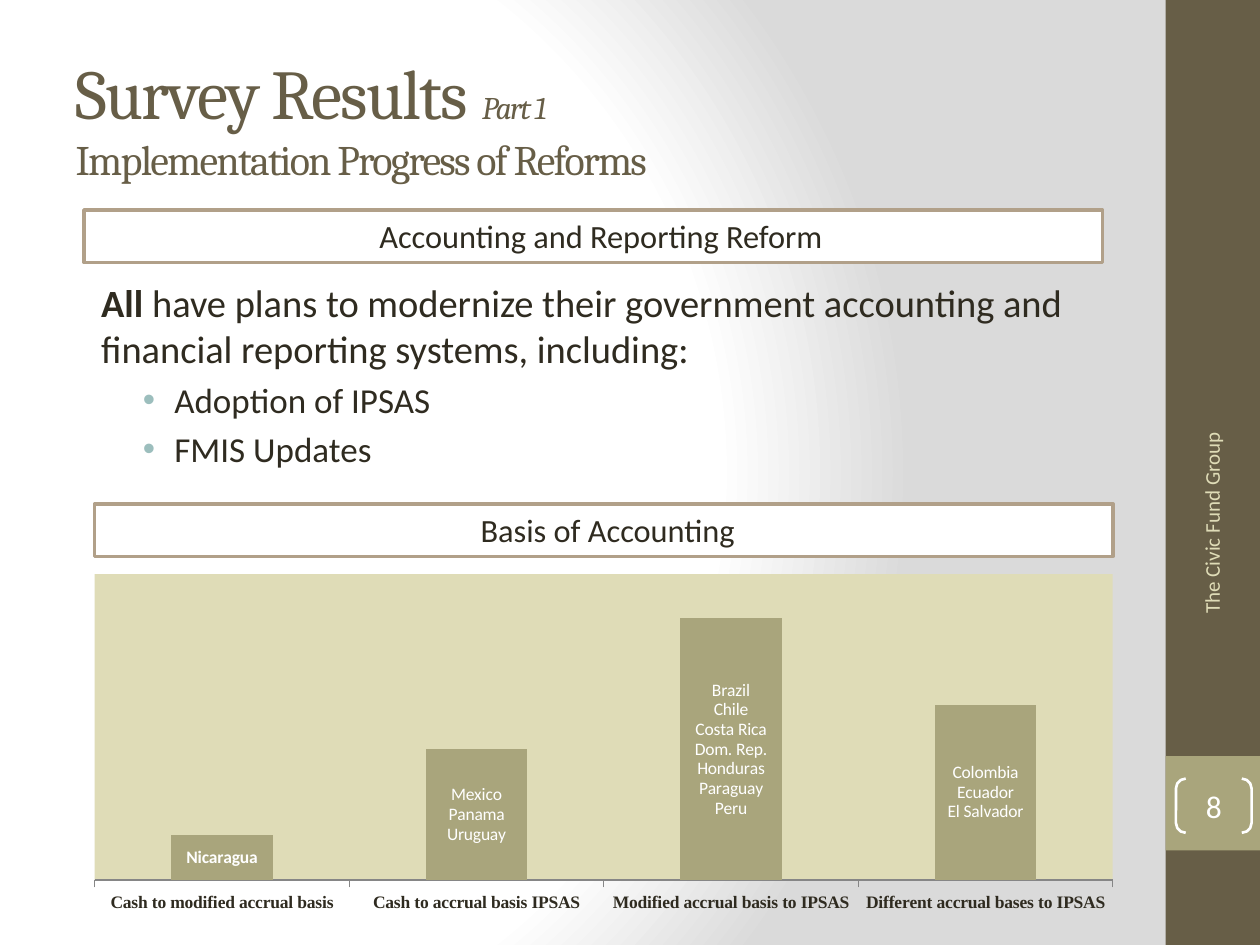
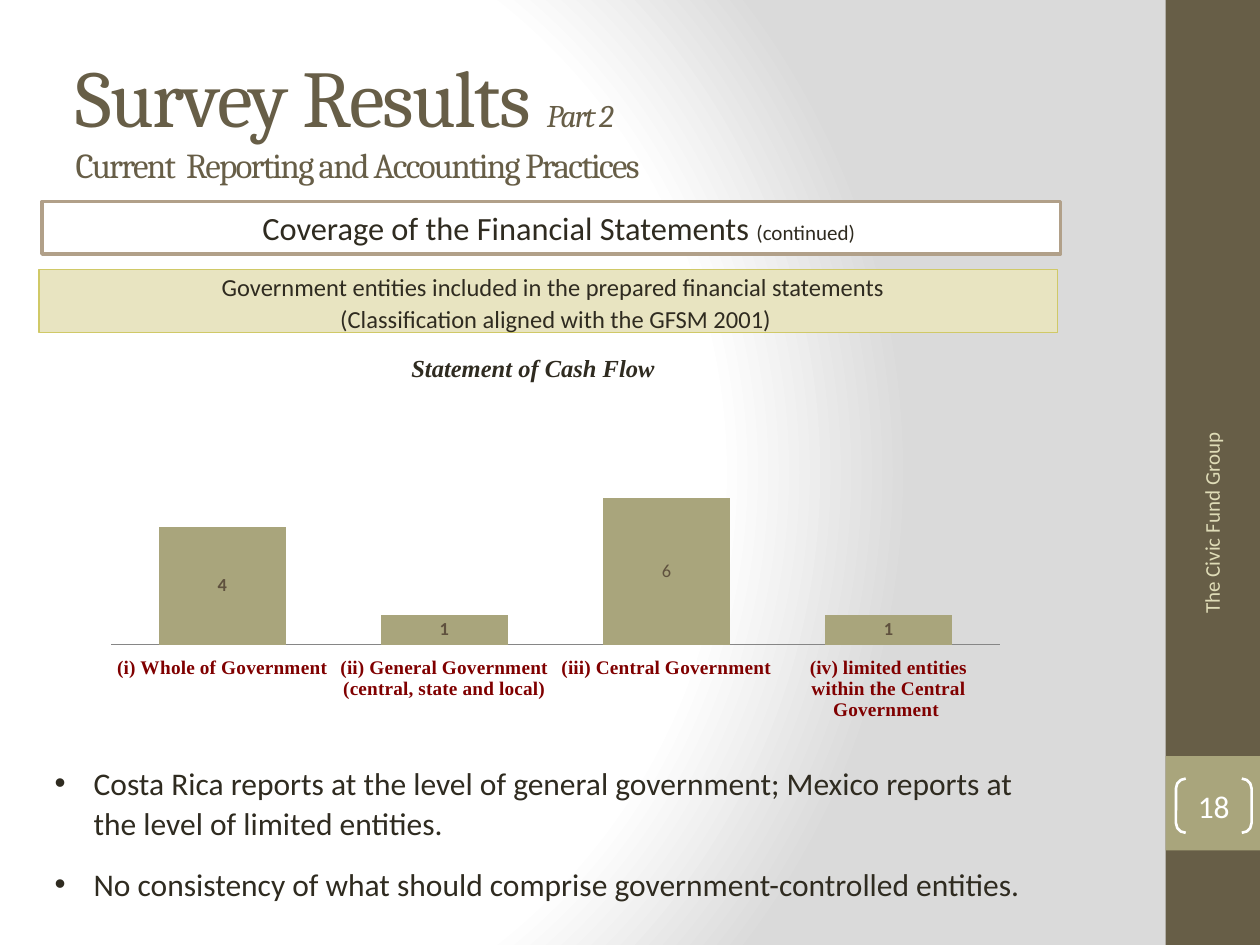
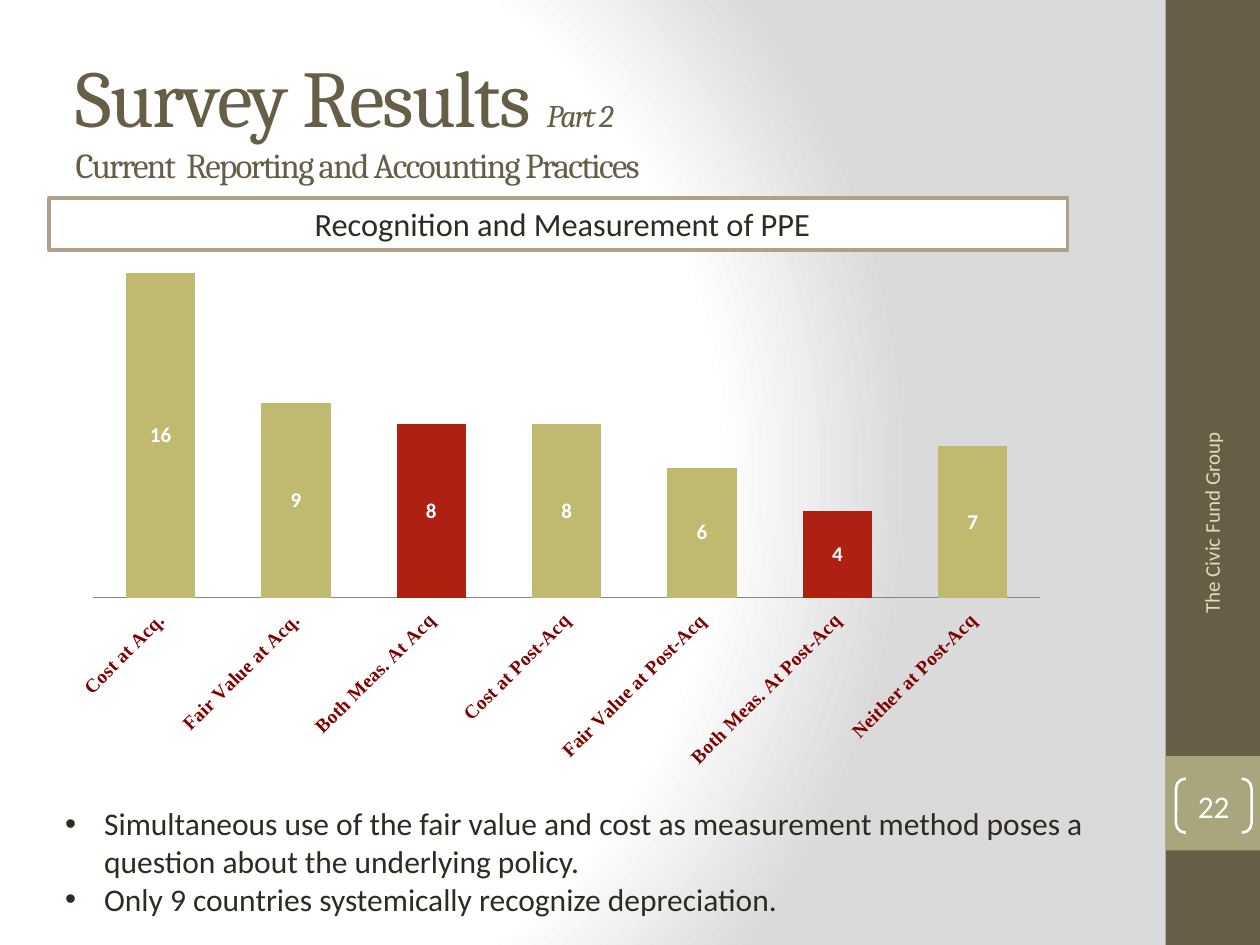
from lxml.etree import SubElement as sub
from pptx import Presentation
from pptx.chart.data import CategoryChartData as Data
from pptx.dml.color import RGBColor as RGB
from pptx.enum.chart import XL_CHART_TYPE as KIND
from pptx.enum.chart import XL_LABEL_POSITION as SPOT
from pptx.enum.chart import XL_TICK_LABEL_POSITION as TAG
from pptx.enum.chart import XL_TICK_MARK as TICK
from pptx.enum.shapes import MSO_SHAPE as SHAPE
from pptx.enum.text import MSO_ANCHOR as ANCHOR
from pptx.enum.text import MSO_AUTO_SIZE as FIT
from pptx.enum.text import PP_ALIGN as ALIGN
from pptx.oxml import parse_xml
from pptx.oxml.ns import nsdecls, qn
from pptx.util import Inches, Pt

INK = {
    "text": "2F2B20", "title": "675E47", "olive": "A9A57C", "sand": "DFDCB7",
    "white": "FFFFFF", "grey": "DADADA", "edge": "B1A089", "pale": "E8E4C1",
    "lime": "D0C967", "teal": "9CBEBD", "maroon": "800000", "brown": "5F513E",
    "moss": "C0BA71", "red": "AE2112", "axis": "868686",
}
SANS, SERIF, ROMAN = "Calibri", "Cambria", "Times New Roman"

# The grid has 120 columns and 90 rows
WIDE, HIGH = Inches(10), Inches(7.5)
COL, ROW = WIDE / 120, HIGH / 90
SIDE = (111, 0, 9, 90)
HEAD = (6, 3.6, 100, 15)
BAR = (97, 5)


def place(box):
    x, y, w, h = box
    return int(x * COL), int(y * ROW), int(w * COL), int(h * ROW)


def inner(box, x, y, w, h):
    return box[0] + x, box[1] + y, w, h


def tint(name):
    return RGB.from_string(INK[name])


def dress(font, size, ink="text", face=SANS, look=""):
    font.size, font.name = Pt(size), face
    font.color.rgb = tint(ink)
    font.bold, font.italic = "b" in look, "i" in look


def write(par, bits, ink="text", face=SANS):
    """Fill a paragraph with (text, size, look) runs."""
    for text, size, look in bits:
        run = par.add_run()
        run.text = text
        dress(run.font, size, ink, face, look)


def indent(par, left, first=0):
    props = par._p.get_or_add_pPr()
    props.set("marL", str(Inches(left)))
    props.set("indent", str(Inches(first)))
    return props


def bullet(par, left, first, ink="text"):
    props = indent(par, left, first)
    color = sub(props, qn("a:buClr"))
    sub(color, qn("a:srgbClr"), val=INK[ink])
    sub(props, qn("a:buFont"), typeface="Arial")
    sub(props, qn("a:buChar"), char="•")


def block(shapes, box, fill=None, line=None, width=1, kind=SHAPE.RECTANGLE):
    shape = shapes.add_shape(kind, *place(box))
    shape.shadow.inherit = False
    if fill:
        shape.fill.solid()
        shape.fill.fore_color.rgb = tint(fill)
    else:
        shape.fill.background()
    if line:
        shape.line.color.rgb = tint(line)
        shape.line.width = Pt(width)
    else:
        shape.line.fill.background()
    return shape


def label(slide, box, text, size, ink="text", face=SANS, look=""):
    shape = slide.shapes.add_textbox(*place(box))
    frame = shape.text_frame
    frame.word_wrap = True
    frame.text = text
    dress(frame.paragraphs[0].runs[0].font, size, ink, face, look)
    return shape


# Shared background and bands, kept on the master
def base(deck, slide):
    master = deck.slide_master
    master.background.fill.solid()
    props = master.element.find(".//" + qn("p:bgPr"))
    stops = "".join(
        f'<a:gs pos="{pos}000"><a:srgbClr val="{INK[ink]}"/></a:gs>'
        for pos, ink in ((0, "white"), (75, "white"), (100, "grey")))
    props.replace(props[0], parse_xml(
        f'<a:gradFill {nsdecls("a")} rotWithShape="1"><a:gsLst>{stops}</a:gsLst>'
        '<a:path path="circle"><a:fillToRect l="20000" t="50000" r="100000" '
        'b="50000"/></a:path></a:gradFill>'))
    for box, ink in ((SIDE, "title"), (inner(SIDE, 0, 72, 9, 9), "olive")):
        band = block(slide.shapes, box, ink)
        master.shapes.element.append(band.element)


# Footer and page number
def side(slide, box, page):
    foot = label(slide, inner(box, -11.16, 53.16, 31.08, 4.8),
                 "The Civic Fund Group", 12, "sand")
    foot.rotation = 270
    foot.text_frame.vertical_anchor = ANCHOR.MIDDLE
    foot.text_frame.paragraphs[0].alignment = ALIGN.RIGHT
    badge = block(slide.shapes, inner(box, 1, 74.16, 7.2, 5.16), None, "white",
                  1.5, SHAPE.DOUBLE_BRACKET)
    badge.adjustments[0] = 0.18
    frame = badge.text_frame
    frame.margin_left = frame.margin_right = 0
    frame.margin_top = frame.margin_bottom = 0
    frame.text = str(page)
    par = frame.paragraphs[0]
    par.alignment = ALIGN.CENTER
    dress(par.runs[0].font, 18, "white")


def head(slide, box, part, topic, big, small):
    title = slide.shapes.title
    title.left, title.top, title.width, title.height = place(box)
    frame = title.text_frame
    frame.auto_size = FIT.NONE
    frame.vertical_anchor = ANCHOR.MIDDLE
    par = frame.paragraphs[0]
    par.alignment = ALIGN.LEFT
    write(par, [("Survey Results ", big, ""), (part, 18, "i")], "title", SERIF)
    par.add_line_break()
    write(par, [(topic, small, "")], "title", SERIF)
    for run in par.runs:
        run.font._element.set("spc", "-100")


def bar(slide, box, rows, fill="white", line="edge", width=2, gap=1.0,
        anchor=ANCHOR.TOP):
    frame = block(slide.shapes, box, fill, line, width).text_frame
    frame.word_wrap = True
    frame.vertical_anchor = anchor
    for i, bits in enumerate(rows):
        par = frame.add_paragraph() if i else frame.paragraphs[0]
        par.alignment = ALIGN.CENTER
        par.line_spacing = gap
        indent(par, 0.12)
        write(par, bits)


def body(slide, box, rows, lead=1.0, before=0, after=0):
    """Fill the body placeholder and give back its paragraphs."""
    hold = slide.placeholders[1]
    hold.left, hold.top, hold.width, hold.height = place(box)
    frame = hold.text_frame
    frame.auto_size = FIT.NONE
    for i, bits in enumerate(rows):
        par = frame.add_paragraph() if i else frame.paragraphs[0]
        par.line_spacing = lead
        par.space_before, par.space_after = Pt(before), Pt(after)
        write(par, bits)
    return frame.paragraphs


def notes(slide, box, lines, **gaps):
    for par in body(slide, box, [[(line, 18, "")] for line in lines], **gaps):
        bullet(par, 0.31, -0.31)


# Charts
def layout(chart, shares):
    area = chart.element.find(".//" + qn("c:plotArea"))
    for old in area.findall(qn("c:layout")):
        area.remove(old)
    spec = "".join(f'<c:{key} val="{val}"/>' for key, val in (
        ("layoutTarget", "inner"), ("xMode", "edge"), ("yMode", "edge"),
        *zip("xywh", shares)))
    area.insert(0, parse_xml(
        f'<c:layout {nsdecls("c")}><c:manualLayout>{spec}</c:manualLayout></c:layout>'))
    return area


def bars(slide, box, cats, vals, shares, top, gap, ink="olive",
         size=11, axis="maroon", tick=TICK.NONE):
    data = Data()
    data.categories = cats
    data.add_series("Series 1", vals)
    chart = slide.shapes.add_chart(KIND.COLUMN_STACKED, *place(box), data).chart
    chart.has_legend = chart.has_title = False
    dress(chart.font, 10)
    chart.font._element.getparent().getparent().addprevious(parse_xml(
        f'<c:spPr {nsdecls("c", "a")}><a:noFill/><a:ln><a:noFill/></a:ln></c:spPr>'))
    layout(chart, shares)
    plot = chart.plots[0]
    plot.gap_width, plot.overlap = gap, 100
    plot.vary_by_categories = False
    value, cat = chart.value_axis, chart.category_axis
    value.visible = value.has_major_gridlines = False
    value.minimum_scale, value.maximum_scale = 0, top
    cat.major_tick_mark = tick
    cat.tick_label_position = TAG.LOW
    cat.format.line.color.rgb = tint("axis")
    dress(cat.tick_labels.font, size, axis, ROMAN, "b")
    row = plot.series[0]
    row.format.fill.solid()
    row.format.fill.fore_color.rgb = tint(ink)
    return chart, row


def values(row, size, ink):
    tags = row.data_labels
    tags.show_value = True
    tags.position = SPOT.CENTER
    dress(tags.font, size, ink, SANS, "b")


def name(row, i, text, size, ink, look=""):
    tag = row.points[i].data_label
    tag.text_frame.text = text
    tag.position = SPOT.CENTER
    for par in tag.text_frame.paragraphs:
        for run in par.runs:
            dress(run.font, size, ink, SANS, look)


# Slides
def reform(slide):
    head(slide, HEAD, "Part 1 ", "Implementation Progress of Reforms", 40, 24)
    bar(slide, (8, 20, *BAR), [[("Accounting and Reporting Reform", 18.5, "")]])
    bar(slide, (9, 48, *BAR), [[("Basis of Accounting ", 18.5, "")]])
    first, *rest = body(slide, (7, 26, 104, 63), [
        [("All ", 22, "b"),
         ("have plans to modernize their government accounting and "
          "financial reporting systems, including:", 22, "")],
        [("Adoption of IPSAS", 20, "")],
        [("FMIS Updates", 20, "")]], before=4)
    sub(indent(first, 0.12), qn("a:buNone"))
    for par in rest:
        par.level = 1
        bullet(par, 0.7, -0.25, "teal")
    chart, row = bars(
        slide, (7, 54, 101, 33.5),
        ["Cash to modified accrual basis", "Cash to accrual basis IPSAS",
         "Modified accrual basis to IPSAS", "Different accrual bases to IPSAS"],
        [17, 50, 100, 67], (0.02, 0.02, 0.96, 0.87), 117, 150,
        size=10, axis="text", tick=TICK.OUTSIDE)
    area = chart.element.find(".//" + qn("c:plotArea"))
    area.append(parse_xml(
        f'<c:spPr {nsdecls("c", "a")}><a:solidFill><a:srgbClr val="{INK["sand"]}"/>'
        '</a:solidFill></c:spPr>'))
    lands = ["Nicaragua", "Mexico\nPanama\nUruguay",
             "Brazil\nChile\nCosta Rica\nDom. Rep.\nHonduras\nParaguay\nPeru",
             "Colombia\nEcuador\nEl Salvador"]
    for i, text in enumerate(lands):
        name(row, i, text, 10, "white", "" if i else "b")


def survey(slide):
    head(slide, HEAD, "Part 2", "Current  Reporting and Accounting Practices", 46, 20)


def cover(slide):
    survey(slide)
    _, row = bars(
        slide, (7, 29, 90, 42.1),
        ["(i) Whole of Government",
         "(ii) General Government (central, state and local)",
         "(iii) Central Government ",
         "(iv) limited entities within the Central Government "],
        [4, 1, 5, 1], (0.04, 0.04, 0.94, 0.73), 11, 75)
    values(row, 10.5, "brown")
    name(row, 2, "6", 10.5, "brown")
    bar(slide, (4, 19.2, *BAR), [[("Coverage of the Financial Statements ", 18.5, ""),
                                  ("(continued)", 12, "")]])
    label(slide, (38, 33, 29, 3.84), "Statement of Cash Flow", 14, "text", ROMAN, "bi")
    notes(slide, (4, 72, 98, 14.64), [
        "Costa Rica reports at the level of general government; Mexico reports "
        "at the level of limited entities.",
        "No consistency of what should comprise government-controlled entities."],
        lead=1.05, before=6, after=6)
    bar(slide, (3.72, 25.68, 97, 6), [
        [("Government entities included in the prepared financial statements ", 14, "")],
        [("(Classification aligned with the GFSM 2001)", 14, "")]],
        "pale", "lime", 1, 1.1, ANCHOR.MIDDLE)


def assets(slide):
    survey(slide)
    bar(slide, (4.68, 18.84, *BAR),
        [[("Recognition and Measurement of PPE ", 18.5, "")]])
    notes(slide, (5, 76, 102, 12.12), [
        "Simultaneous use of the fair value and cost as measurement method poses "
        "a question about the underlying policy.",
        "Only 9 countries systemically recognize depreciation."])
    chart, row = bars(
        slide, (6, 25, 95, 49.1),
        ["Cost at Acq.", "Fair Value at Acq.", "Both Meas. At Acq",
         "Cost at Post-Acq", "Fair Value at Post-Acq",
         "Both Meas. At Post-Acq", "Neither at Post-Acq"],
        [16, 9, 8, 8, 6, 4, 7], (0.03, 0.02, 0.95, 0.63), 15, 95, "moss")
    chart.value_axis.major_unit = 3
    turn = chart.element.find(".//" + qn("c:catAx") + "//" + qn("a:bodyPr"))
    turn.set("rot", "-2700000")
    turn.set("vert", "horz")
    values(row, 12, "white")
    for i in (2, 5):
        fill = row.points[i].format.fill
        fill.solid()
        fill.fore_color.rgb = tint("red")


def main():
    deck = Presentation()
    deck.slide_width, deck.slide_height = WIDE, HIGH
    for i, (build, page) in enumerate(((reform, 8), (cover, 18), (assets, 22))):
        slide = deck.slides.add_slide(deck.slide_layouts[1])
        if not i:
            base(deck, slide)
        side(slide, SIDE, page)
        build(slide)
    deck.save("out.pptx")


if __name__ == "__main__":
    main()
